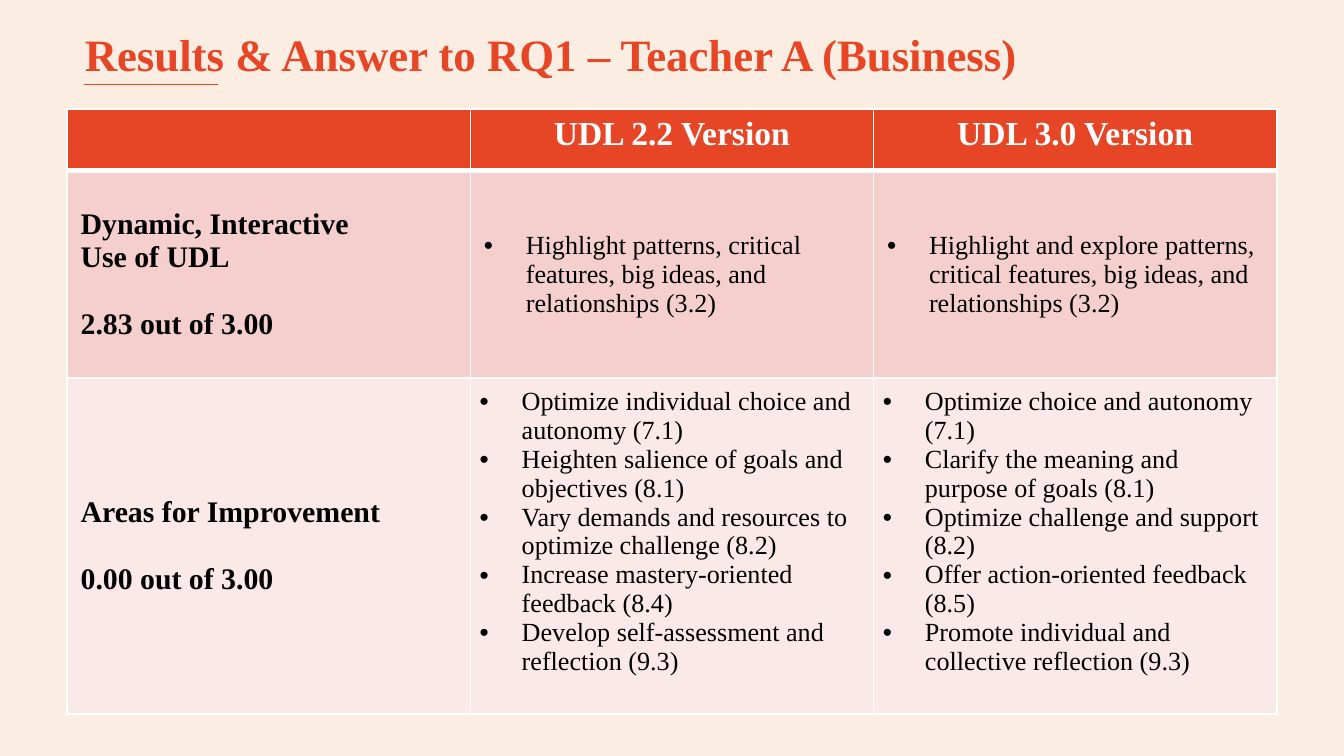
from dataclasses import dataclass

from lxml import etree
from pptx import Presentation
from pptx.dml.color import RGBColor
from pptx.enum import shapes, text as text_enum
from pptx.oxml import ns
from pptx.util import Pt


@dataclass(frozen=True)
class Theme:
    """Colours, type sizes and font of the slide."""
    font: str = "Times New Roman"
    background: str = "FCEDE2"
    accent: str = "E64626"
    strong_row: str = "F5CFCD"
    pale_row: str = "FAE9E8"
    white: str = "FFFFFF"
    black: str = "000000"
    title_size: int = 24
    header_size: int = 18
    label_size: int = 16
    list_size: int = 14


def write(paragraph, content, *, font, size, color, bold=False, align=None, before=None):
    """Put formatted text into a paragraph."""
    paragraph.text = content
    paragraph.alignment = align
    if before:
        paragraph.space_before = Pt(before)
    for run in paragraph.runs:
        run.font.name = font
        run.font.size = Pt(size)
        run.font.bold = bold
        run.font.color.rgb = RGBColor.from_string(color)


class SlideBuilder:
    """Holds the theme and the current slide."""

    def __init__(self, presentation, theme):
        """Add a title-only slide with a plain background."""
        self.theme = theme
        self.slide = presentation.slides.add_slide(presentation.slide_layouts[5])
        fill = self.slide.background.fill
        fill.solid()
        fill.fore_color.rgb = RGBColor.from_string(theme.background)

    def title(self, content, left, top, width, height):
        """Place and format the title placeholder."""
        shape = self.slide.shapes.title
        shape.left, shape.top, shape.width, shape.height = map(Pt, (left, top, width, height))
        frame = shape.text_frame
        frame.margin_left = frame.margin_right = frame.margin_top = frame.margin_bottom = 0
        frame.auto_size = text_enum.MSO_AUTO_SIZE.NONE
        frame.vertical_anchor = text_enum.MSO_ANCHOR.BOTTOM
        write(frame.paragraphs[0], content, font=self.theme.font, size=self.theme.title_size,
              color=self.theme.accent, bold=True, align=text_enum.PP_ALIGN.LEFT)

    def rule(self, left, top, width):
        """Draw a thin horizontal accent line."""
        line = self.slide.shapes.add_connector(
            shapes.MSO_CONNECTOR.STRAIGHT, Pt(left), Pt(top), Pt(left + width), Pt(top))
        line.line.color.rgb = RGBColor.from_string(self.theme.accent)
        line.line.width = Pt(0.75)
        etree.SubElement(line._element.spPr, ns.qn("a:effectLst"))

    def table(self, left, top, column_widths, row_heights):
        """Add an empty table and return it."""
        frame = self.slide.shapes.add_table(
            len(row_heights), len(column_widths), Pt(left), Pt(top),
            Pt(sum(column_widths)), Pt(sum(row_heights)))
        for column, width in zip(frame.table.columns, column_widths):
            column.width = Pt(width)
        for row, height in zip(frame.table.rows, row_heights):
            row.height = Pt(height)
        return frame.table

    def cell(self, cell, fill, *, top_line=1, bottom_line=1):
        """Fill a cell and give it white borders."""
        properties = cell._tc.get_or_add_tcPr()
        for side, width in (("L", 1), ("R", 1), ("T", top_line), ("B", bottom_line)):
            border = etree.SubElement(properties, ns.qn(f"a:ln{side}"), w=str(Pt(width)))
            solid = etree.SubElement(border, ns.qn("a:solidFill"))
            etree.SubElement(solid, ns.qn("a:srgbClr"), val=self.theme.white)
        cell.fill.solid()
        cell.fill.fore_color.rgb = RGBColor.from_string(fill)

    def header(self, cell, content):
        """Make a header cell."""
        self.cell(cell, self.theme.accent, bottom_line=3)
        if content:
            write(cell.text_frame.paragraphs[0], content, font=self.theme.font,
                  size=self.theme.header_size, color=self.theme.white, bold=True,
                  align=text_enum.PP_ALIGN.CENTER)

    def label(self, cell, fill, name, score, top_line):
        """Make a row label with its score below."""
        self.cell(cell, fill, top_line=top_line)
        cell.vertical_anchor = text_enum.MSO_ANCHOR.MIDDLE
        style = dict(font=self.theme.font, size=self.theme.label_size,
                     color=self.theme.black, bold=True)
        write(cell.text_frame.paragraphs[0], name, **style)
        write(cell.text_frame.add_paragraph(), score, before=18, **style)

    def bullets(self, cell, fill, items, top_line):
        """Make a bulleted cell, centred vertically when it has one item."""
        self.cell(cell, fill, top_line=top_line)
        if len(items) == 1:
            cell.vertical_anchor = text_enum.MSO_ANCHOR.MIDDLE
        else:
            cell.margin_left = cell.margin_right = cell.margin_top = cell.margin_bottom = Pt(5)
        frame = cell.text_frame
        for index, item in enumerate(items):
            paragraph = frame.add_paragraph() if index else frame.paragraphs[0]
            write(paragraph, item, font=self.theme.font, size=self.theme.list_size,
                  color=self.theme.black)
            properties = paragraph._p.get_or_add_pPr()
            properties.set("marL", str(Pt(22.5)))
            properties.set("indent", str(Pt(-22.5)))
            etree.SubElement(properties, ns.qn("a:buFont"), typeface="Arial")
            etree.SubElement(properties, ns.qn("a:buChar"), char="•")


def main():
    """Build the results slide."""
    theme = Theme()
    presentation = Presentation()
    presentation.slide_width, presentation.slide_height = Pt(720), Pt(405)
    builder = SlideBuilder(presentation, theme)
    builder.rule(45, 45.2, 72)
    builder.title("Results & Answer to RQ1 – Teacher A (Business)", 45.4, 14.4, 629.3, 28.8)

    headers = ["", "UDL 2.2 Version", "UDL 3.0 Version"]
    rows = [
        (theme.strong_row, "Dynamic, Interactive \vUse of UDL", "2.83 out of 3.00",
         ["Highlight patterns, critical features, big ideas, and relationships (3.2)"],
         ["Highlight and explore patterns, critical features, big ideas, and relationships (3.2)"]),
        (theme.pale_row, "Areas for Improvement", "0.00 out of 3.00",
         ["Optimize individual choice and autonomy (7.1)",
          "Heighten salience of goals and objectives (8.1)",
          "Vary demands and resources to optimize challenge (8.2)",
          "Increase mastery-oriented feedback (8.4)",
          "Develop self-assessment and reflection (9.3)"],
         ["Optimize choice and autonomy (7.1)",
          "Clarify the meaning and purpose of goals (8.1)",
          "Optimize challenge and support (8.2)",
          "Offer action-oriented feedback (8.5)",
          "Promote individual and collective reflection (9.3)"]),
    ]
    table = builder.table(36, 58.5, [216] * 3, [33, 111, 180])
    for column, content in enumerate(headers):
        builder.header(table.cell(0, column), content)
    for row, (fill, name, score, *lists) in enumerate(rows, start=1):
        top_line = 3 if row == 1 else 1
        builder.label(table.cell(row, 0), fill, name, score, top_line)
        for column, items in enumerate(lists, start=1):
            builder.bullets(table.cell(row, column), fill, items, top_line)
    presentation.save("out.pptx")


if __name__ == "__main__":
    main()
